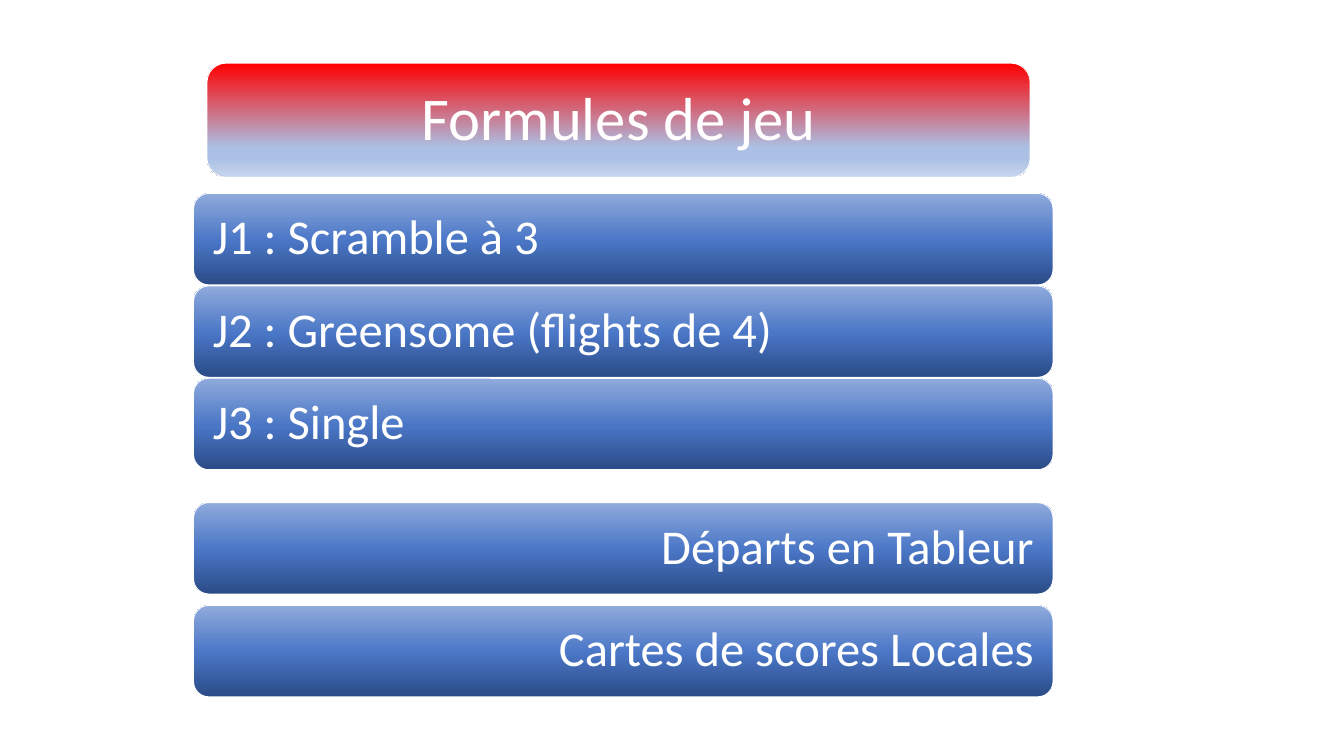
from lxml import etree
from pptx import Presentation
from pptx.dml.color import RGBColor
from pptx.enum.shapes import MSO_SHAPE
from pptx.enum.text import MSO_ANCHOR, MSO_AUTO_SIZE, PP_ALIGN
from pptx.oxml.ns import qn
from pptx.util import Inches, Pt

ROUNDED = MSO_SHAPE.ROUNDED_RECTANGLE
MIDDLE = MSO_ANCHOR.MIDDLE
NO_AUTOFIT = MSO_AUTO_SIZE.NONE
LEFT, CENTER, RIGHT = PP_ALIGN.LEFT, PP_ALIGN.CENTER, PP_ALIGN.RIGHT

FONT = "Calibri"
COLORS = {
    "white": "FFFFFF",
    "red": "FF0000",
    "sky": "ABC0E4",
    "pale": "C7D5ED",
    "navy": "2A4B86",
    "blue": "4A76C6",
    "light": "8FAADC",
}
BANNER_STOPS = [(0, "red"), (74, "sky"), (83, "sky"), (100, "pale")]
BAR_STOPS = [(0, "navy"), (48, "blue"), (100, "light")]

BAR_LEFT, BAR_WIDTH, BAR_HEIGHT = 2.88, 12.79, 1.36
# Each group: top of first bar, distance between tops, alignment, texts
BAR_GROUPS = [
    (2.88, 1.375, LEFT,
     ["J1 : Scramble à 3", "J2 : Greensome (flights de 4)", "J3 : Single"]),
    (7.48, 1.53, RIGHT, ["Départs en Tableur", "Cartes de scores Locales"]),
]


def rgb(name):
    return RGBColor.from_string(COLORS[name])


def set_gradient(shape, stops, angle):
    """Fill with any number of stops; angle runs counter-clockwise."""
    shape.fill.gradient()
    shape.fill.gradient_angle = angle
    stop_list = shape.element.spPr.find(qn("a:gradFill")).find(qn("a:gsLst"))
    for old_stop in list(stop_list):
        stop_list.remove(old_stop)
    for percent, color in stops:
        stop = etree.SubElement(stop_list, qn("a:gs"), pos=str(percent * 1000))
        etree.SubElement(stop, qn("a:srgbClr"), val=COLORS[color])


def add_panel(slide, left, top, width, height, stops, angle):
    panel = slide.shapes.add_shape(
        ROUNDED, Inches(left), Inches(top), Inches(width), Inches(height))
    panel.shadow.inherit = False
    set_gradient(panel, stops, angle)
    panel.line.color.rgb = rgb("white")
    panel.line.width = Pt(1)
    return panel


def set_text(shape, text, size, align, inset):
    frame = shape.text_frame
    frame.text = text
    frame.word_wrap = True
    frame.auto_size = NO_AUTOFIT
    frame.vertical_anchor = MIDDLE
    frame.margin_left = frame.margin_right = Inches(inset)
    frame.margin_top = frame.margin_bottom = Inches(inset)
    paragraph = frame.paragraphs[0]
    paragraph.alignment = align
    paragraph.line_spacing = 0.9
    paragraph.font.name = FONT
    paragraph.font.size = Pt(size)
    paragraph.font.color.rgb = rgb("white")


def add_title(slide):
    add_panel(slide, 3.08, 0.94, 12.25, 1.7, BANNER_STOPS, 270)
    title = slide.shapes.title
    title.left, title.top = Inches(3.17), Inches(1.03)
    title.width, title.height = Inches(12.08), Inches(1.54)
    set_text(title, "Formules de jeu", 65, CENTER, 0.27)
    # Bring the title in front of its banner
    title.element.getparent().append(title.element)


def add_bars(slide, first_top, pitch, align, texts):
    for index, text in enumerate(texts):
        bar = add_panel(slide, BAR_LEFT, first_top + index * pitch,
                        BAR_WIDTH, BAR_HEIGHT, BAR_STOPS, 90)
        set_text(bar, text, 52, align, 0.22)


def main():
    presentation = Presentation()
    presentation.slide_width = Inches(20)
    presentation.slide_height = Inches(11.25)
    slide = presentation.slides.add_slide(presentation.slide_layouts[5])

    # Title banner
    add_title(slide)

    # Game formats, then practical information
    for group in BAR_GROUPS:
        add_bars(slide, *group)

    presentation.save("out.pptx")


if __name__ == "__main__":
    main()
